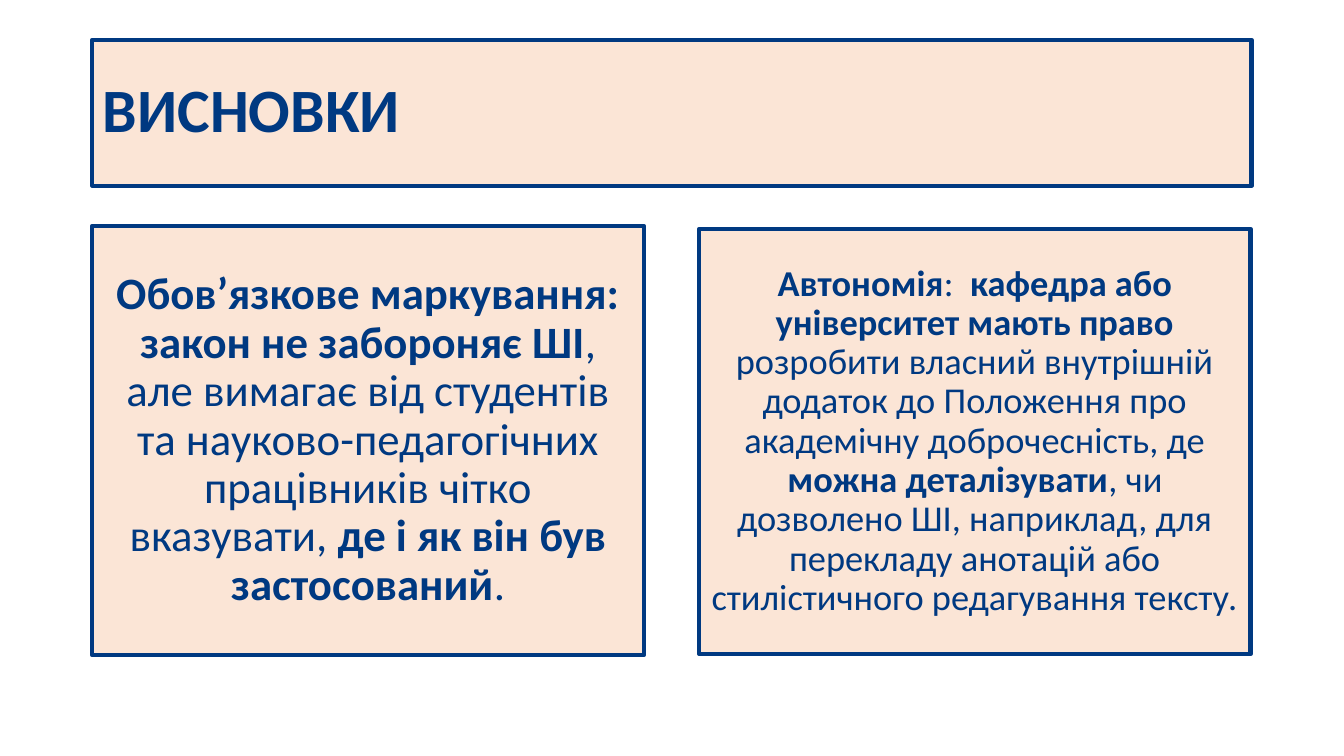
from pptx import Presentation
from pptx.dml.color import RGBColor
from pptx.enum.shapes import MSO_SHAPE
from pptx.enum.text import MSO_ANCHOR, PP_ALIGN
from pptx.util import Pt

PX = 9525
COLORS = {"navy": "003981", "peach": "FBE5D6"}

TITLE = [("ВИСНОВКИ", True)]
MARKING = [
    ("Обов’язкове маркування: закон не забороняє ШІ", True),
    (", але вимагає від студентів та науково-педагогічних працівників "
     "чітко вказувати, ", False),
    ("де і як він був застосований", True),
    (".", False),
]
AUTONOMY = [
    ("Автономія", True),
    (":  ", False),
    ("кафедра або університет мають право ", True),
    ("розробити власний внутрішній додаток до Положення про "
     "академічну доброчесність, де ", False),
    ("можна деталізувати", True),
    (", чи дозволено ШІ, наприклад, для перекладу анотацій або "
     "стилістичного редагування тексту.", False),
]


def apply(obj, values):
    for name, value in values.items():
        setattr(obj, name, value)


class Deck:
    def __init__(self, width, height):
        self.prs = Presentation()
        apply(self.prs, {"slide_width": width * PX, "slide_height": height * PX})
        self.slide = self.prs.slides.add_slide(self.prs.slide_layouts[6])
        self.font = "Calibri"
        self.line_width = Pt(3)

    def color(self, name):
        return RGBColor.from_string(COLORS[name])

    def panel(self, box, runs, size, align, inset_x, inset_y):
        sp = self.slide.shapes.add_shape(MSO_SHAPE.RECTANGLE, *(v * PX for v in box))
        sp.shadow.inherit = False
        sp.fill.solid()
        sp.fill.fore_color.rgb = self.color("peach")
        sp.line.color.rgb = self.color("navy")
        sp.line.width = self.line_width
        tf = sp.text_frame
        apply(tf, {
            "word_wrap": True,
            "vertical_anchor": MSO_ANCHOR.MIDDLE,
            "margin_left": inset_x * PX,
            "margin_right": inset_x * PX,
            "margin_top": inset_y * PX,
            "margin_bottom": inset_y * PX,
        })
        p = tf.paragraphs[0]
        apply(p, {"alignment": align, "line_spacing": 0.9})
        for text, bold in runs:
            r = p.add_run()
            r.text = text
            apply(r.font, {"name": self.font, "size": Pt(size), "bold": bold})
            r.font.color.rgb = self.color("navy")


def main():
    deck = Deck(1280, 720)
    deck.panel((88, 38, 1104, 139), TITLE, 44, PP_ALIGN.LEFT, 10, 5)
    deck.panel((88, 215, 525, 409), MARKING, 32, PP_ALIGN.CENTER, 12, 12)
    deck.panel((666, 218, 525, 405), AUTONOMY, 26, PP_ALIGN.CENTER, 10, 10)
    deck.prs.save("out.pptx")


if __name__ == "__main__":
    main()
